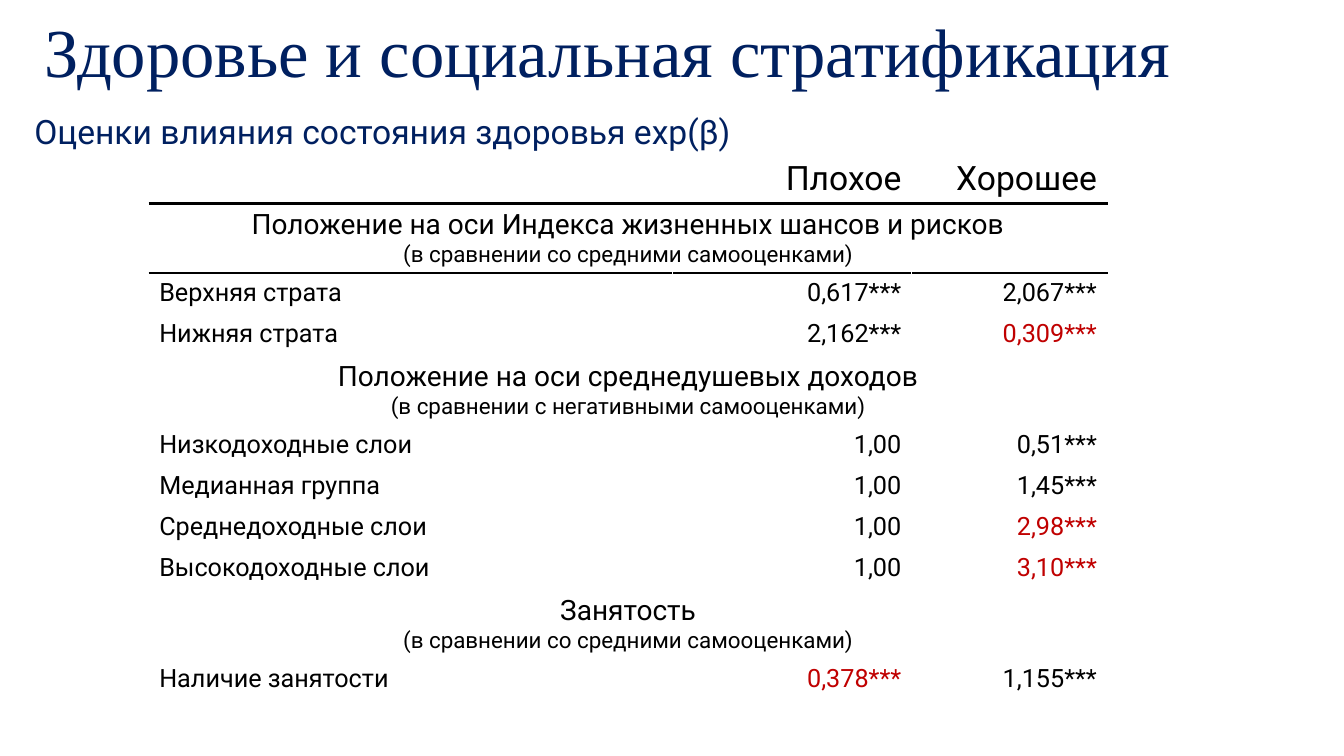
from lxml import etree
from pptx import Presentation
from pptx.dml.color import RGBColor
from pptx.enum.text import MSO_ANCHOR, MSO_AUTO_SIZE, PP_ALIGN
from pptx.oxml.ns import qn
from pptx.util import Inches, Pt

NAVY = RGBColor(0x00, 0x20, 0x60)
BLACK = RGBColor(0, 0, 0)
RED = RGBColor(0xC0, 0, 0)
BODY_FONT = "Roboto"

TITLE = "Здоровье и социальная стратификация"
SUBTITLE = "Оценки влияния состояния здоровья exp(β)"
HEADER = ("", "Плохое", "Хорошее")
SECTIONS = [
    ("Положение на оси Индекса жизненных шансов и рисков",
     "(в сравнении со средними самооценками)",
     [("Верхняя страта", "0,617***", "2,067***"),
      ("Нижняя страта", "2,162***", "0,309***")]),
    ("Положение на оси среднедушевых доходов",
     "(в сравнении с негативными самооценками)",
     [("Низкодоходные слои", "1,00", "0,51***"),
      ("Медианная группа", "1,00", "1,45***"),
      ("Среднедоходные слои", "1,00", "2,98***"),
      ("Высокодоходные слои", "1,00", "3,10***")]),
    ("Занятость",
     "(в сравнении со средними самооценками)",
     [("Наличие занятости", "0,378***", "1,155***")]),
]
HIGHLIGHTS = {"0,309***", "2,98***", "3,10***", "0,378***"}
COLUMN_WIDTHS = (5.19, 2.37, 1.94)
ROW_HEIGHT = 0.41


def style(paragraph, size, color, font=BODY_FONT, align=PP_ALIGN.LEFT):
    paragraph.alignment = align
    for run in paragraph.runs:
        run.font.size = Pt(size)
        run.font.name = font
        run.font.color.rgb = color


def place(placeholder, content, left, top, width, height):
    placeholder.left, placeholder.top = Inches(left), Inches(top)
    placeholder.width, placeholder.height = Inches(width), Inches(height)
    placeholder.text_frame.text = content
    placeholder.text_frame.auto_size = MSO_AUTO_SIZE.NONE
    return placeholder.text_frame.paragraphs[0]


def rule(cell, side):
    line = etree.Element(qn(f"a:{side}"), w=str(Pt(2.25)))
    fill = etree.SubElement(line, qn("a:solidFill"))
    etree.SubElement(fill, qn("a:srgbClr"), val=str(BLACK))
    cell._tc.get_or_add_tcPr().insert(0, line)


def fill_row(table, row, values, size):
    for column, value in enumerate(values):
        cell = table.cell(row, column)
        cell.text_frame.text = value
        style(cell.text_frame.paragraphs[0], size,
              RED if value in HIGHLIGHTS else BLACK,
              align=PP_ALIGN.RIGHT if column else PP_ALIGN.LEFT)


def fill_section(table, row, heading, comparison):
    cell = table.cell(row, 0)
    cell.merge(table.cell(row, len(HEADER) - 1))
    cell.text_frame.text = f"{heading}\n{comparison}"
    for paragraph, size in zip(cell.text_frame.paragraphs, (20, 16)):
        style(paragraph, size, BLACK, align=PP_ALIGN.CENTER)


def main():
    deck = Presentation()
    deck.slide_width, deck.slide_height = Inches(13.33), Inches(7.5)
    slide = deck.slides.add_slide(deck.slide_layouts[1])

    title = place(slide.shapes.title, TITLE, 0.34, 0.16, 12.99, 0.77)
    slide.shapes.title.text_frame.vertical_anchor = MSO_ANCHOR.MIDDLE
    title.line_spacing = 0.9
    style(title, 49, NAVY, "Times New Roman")

    row_count = 1 + sum(1 + len(rows) for _, _, rows in SECTIONS)
    table = slide.shapes.add_table(
        row_count, len(HEADER), Inches(1.48), Inches(1.53),
        Inches(sum(COLUMN_WIDTHS)), Inches(ROW_HEIGHT * row_count)).table
    table.first_row = table.horz_banding = False
    for column, width in zip(table.columns, COLUMN_WIDTHS):
        column.width = Inches(width)
    for row in table.rows:
        row.height = Inches(ROW_HEIGHT)
        for cell in row.cells:
            cell.fill.background()

    fill_row(table, 0, HEADER, 24)
    position = 1
    for heading, comparison, rows in SECTIONS:
        fill_section(table, position, heading, comparison)
        for offset, values in enumerate(rows, 1):
            fill_row(table, position + offset, values, 18)
        position += 1 + len(rows)
    for column in range(len(HEADER)):
        rule(table.cell(0, column), "lnB")
        rule(table.cell(1, column), "lnT")

    subtitle = place(slide.placeholders[1], SUBTITLE, 0.24, 1.05, 12.74, 0.54)
    subtitle.space_before = Pt(10)
    style(subtitle, 24, NAVY)
    properties = subtitle._p.get_or_add_pPr()
    properties.set("marL", "0")
    properties.set("indent", "0")
    etree.SubElement(properties, qn("a:buNone"))

    deck.save("out.pptx")


if __name__ == "__main__":
    main()
